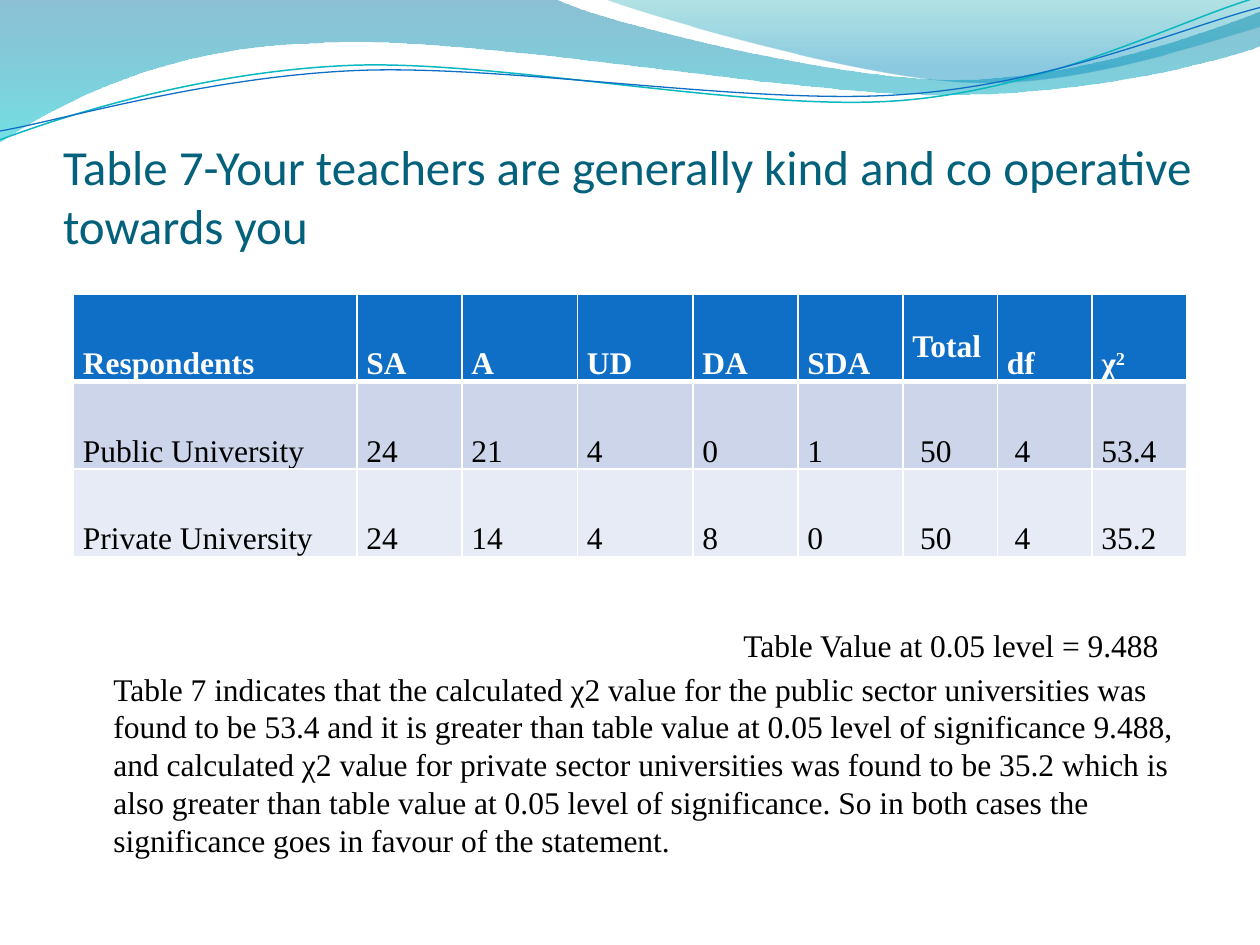
from lxml import etree
from pptx import Presentation
from pptx.dml.color import RGBColor
from pptx.enum.text import MSO_ANCHOR as Anchor, MSO_AUTO_SIZE as AutoSize, PP_ALIGN as Align
from pptx.oxml.ns import qn
from pptx.util import Inches, Pt

COLORS = {
    "title": "04617B", "text": "000000", "white": "FFFFFF",
    "header": "0F6FC6", "band_dark": "CCD5EA", "band_light": "E7EBF5",
    "wave_blue": "0074A1", "wave_cyan": "00C6CF",
    "crest_teal": "00A1A9", "crest_blue": "008BBF",
    "line_teal": "0AB8BF", "line_blue": "0F6FC6",
}
SERIF = "Times New Roman"
GRID = 12  # grid units per inch

COLUMNS = [27, 10, 11, 11, 10, 10, 9, 9, 9]
ROWS = [
    ["Respondents", "SA", "A", "UD", "DA", "SDA", "Total", "df", "χ2"],
    ["Public University", "24", "21", "4", "0", "1", "50", "4", "53.4"],
    ["Private University", "24", "14", "4", "8", "0", "50", "4", "35.2"],
]
TOTAL, DF = 6, 7

# Each path is a start point, then lines (2 numbers) and Bézier curves (6 numbers),
# in hundredths of an inch.
WAVE = [(0, 0), (440, -1), (476, 17, 664, 63, 758, 63), (853, 63, 958, 26, 1000, 9),
        (1001, 36), (983, 44, 870, 76, 746, 75), (622, 75, 382, 28, 257, 34),
        (129, 36, 46, 83, -1, 113)]
CREST = [(479, -1), (509, 11, 682, 62, 769, 65), (856, 69, 961, 32, 1000, 21), (1000, 0)]
TEAL_LINE = [(0, 111), (48, 93, 158, 57, 277, 52), (395, 47, 593, 89, 713, 80),
             (833, 71, 938, 15, 998, -2)]
BLUE_LINE = [(0, 104), (47, 96, 164, 61, 283, 56), (403, 51, 597, 84, 717, 75),
             (836, 67, 941, 21, 1000, 6)]


def color(name):
    return RGBColor.from_string(COLORS[name])


def units(*counts):
    return [Inches(count / GRID) for count in counts]


def place(shape, *box):
    shape.left, shape.top, shape.width, shape.height = units(*box)


def format_run(run, size, font, color_name, bold=False):
    run.font.size, run.font.name, run.font.bold = Pt(size), font, bold
    run.font.color.rgb = color(color_name)


def add_outline(page, path, close):
    """Add a freeform through the end points, then bend its curved segments."""
    ends = [part[-2:] for part in path]
    left, top = (min(values) for values in zip(*ends))
    builder = page.shapes.build_freeform(*ends[0], scale=Inches(0.01))
    builder.add_line_segments(ends[1:], close=close)
    shape = builder.convert_to_shape()
    shape.shadow.inherit = False
    segments = list(shape.element.iter(qn("a:lnTo")))
    for segment, part in zip(segments, path[1:]):
        if len(part) == 6:
            curve = etree.Element(qn("a:cubicBezTo"))
            for x, y in zip(part[::2], part[1::2]):
                etree.SubElement(curve, qn("a:pt"), x=str(x - left), y=str(y - top))
            segment.getparent().replace(segment, curve)
    page.shapes.title.element.addprevious(shape.element)
    return shape


def add_wave(page, path, stops):
    """Add a filled wave; stops are (position, colour name, opacity in percent)."""
    wave = add_outline(page, path, True)
    wave.line.fill.background()
    wave.fill.gradient()
    wave.fill.gradient_angle = 270
    for stop, (position, name, _) in zip(wave.fill.gradient_stops, stops):
        stop.position = position
        stop.color.rgb = color(name)
    for node, (_, _, opacity) in zip(wave.element.spPr.iter(qn("a:srgbClr")), stops):
        etree.SubElement(node, qn("a:alpha"), val=str(opacity * 1000))


def add_wave_line(page, path, name, width):
    line = add_outline(page, path, False)
    line.fill.background()
    line.line.color.rgb = color(name)
    line.line.width = Pt(width)


def fill_title(title, text):
    place(title, 6, 9.25, 108, 15)
    frame = title.text_frame
    frame.text = text
    frame.auto_size, frame.word_wrap = AutoSize.NONE, True
    frame.vertical_anchor = Anchor.BOTTOM
    frame.margin_left = frame.margin_right = frame.margin_bottom = 0
    para = frame.paragraphs[0]
    para.alignment = Align.LEFT
    format_run(para.runs[0], 28, "Calibri", "title")


def fill_body(body, items):
    """Fill the body from the bottom up; items are (indent in inches, text)."""
    place(body, 6, 25.5, 108, 57.6)
    frame = body.text_frame
    frame.text = "\n".join(text for _, text in items)
    frame.auto_size, frame.word_wrap = AutoSize.NONE, True
    frame.vertical_anchor = Anchor.BOTTOM
    frame.margin_bottom = Inches(0.11)
    for para, (indent, _) in zip(frame.paragraphs, items):
        para.alignment = Align.LEFT
        para.space_before = Pt(3.25)
        properties = para._p.get_or_add_pPr()
        properties.set("marL", str(Inches(indent)))
        properties.set("indent", "0")
        etree.SubElement(properties, qn("a:buNone"))
        format_run(para.runs[0], 18, SERIF, "text")


def set_borders(cell, **widths):
    properties = cell._tc.get_or_add_tcPr()
    for index, side in enumerate(("lnL", "lnR", "lnT", "lnB")):
        line = etree.Element(qn("a:" + side), w=str(Pt(widths.get(side, 1))))
        fill = etree.SubElement(line, qn("a:solidFill"))
        etree.SubElement(fill, qn("a:srgbClr"), val=COLORS["white"])
        properties.insert(index, line)


def fill_cell(cell, text, row, column):
    header = row == 0
    cell.text = text
    cell.fill.solid()
    cell.fill.fore_color.rgb = color(("header", "band_dark", "band_light")[row])
    shifted = not header and column in (TOTAL, DF)
    cell.margin_left = Pt(9.9 if shifted else 5.4)
    cell.margin_right = Pt(5.4)
    cell.margin_top = cell.margin_bottom = 0
    cell.vertical_anchor = Anchor.TOP if text == "Total" else Anchor.BOTTOM
    para = cell.text_frame.paragraphs[0]
    para.alignment = Align.JUSTIFY
    para.line_spacing = 2.0
    if text == "χ2":
        para.runs[0].text = "χ"
        para.add_run().text = "2"
        para.runs[1].font._element.set("baseline", "30000")
    for run in para.runs:
        format_run(run, 18, SERIF, "white" if header else "text", header)
    set_borders(cell, lnT=3 if row == 1 else 1, lnB=3 if header else 1)


def add_results_table(page):
    box = units(7, 28, sum(COLUMNS), 25)
    table = page.shapes.add_table(len(ROWS), len(COLUMNS), *box).table
    for column, width in zip(table.columns, units(*COLUMNS)):
        column.width = width
    for row, texts in enumerate(ROWS):
        for column, text in enumerate(texts):
            fill_cell(table.cell(row, column), text, row, column)


def main():
    deck = Presentation()
    deck.slide_width, deck.slide_height = Inches(10), Inches(7.5)
    page = deck.slides.add_slide(deck.slide_layouts[1])
    add_wave(page, WAVE, [(0, "wave_blue", 45), (1, "wave_cyan", 55)])
    add_wave(page, CREST, [(0, "crest_teal", 30), (0.8, "crest_blue", 45)])
    add_wave_line(page, TEAL_LINE, "line_teal", 0.85)
    add_wave_line(page, BLUE_LINE, "line_blue", 0.75)
    fill_title(page.shapes.title,
               "Table 7-Your teachers are generally kind and co operative towards you")
    fill_body(page.placeholders[1], [
        (5.3, "Table Value at 0.05 level = 9.488"),
        (0.3, "Table 7 indicates that the calculated χ2 value for the public sector "
              "universities was found to be 53.4 and it is greater than table value at 0.05 "
              "level of significance 9.488, and calculated χ2 value for private sector "
              "universities was found to be 35.2 which is also greater than table value at "
              "0.05 level of significance. So in both cases the significance goes in favour "
              "of the statement."),
    ])
    add_results_table(page)
    deck.save("out.pptx")


if __name__ == "__main__":
    main()
